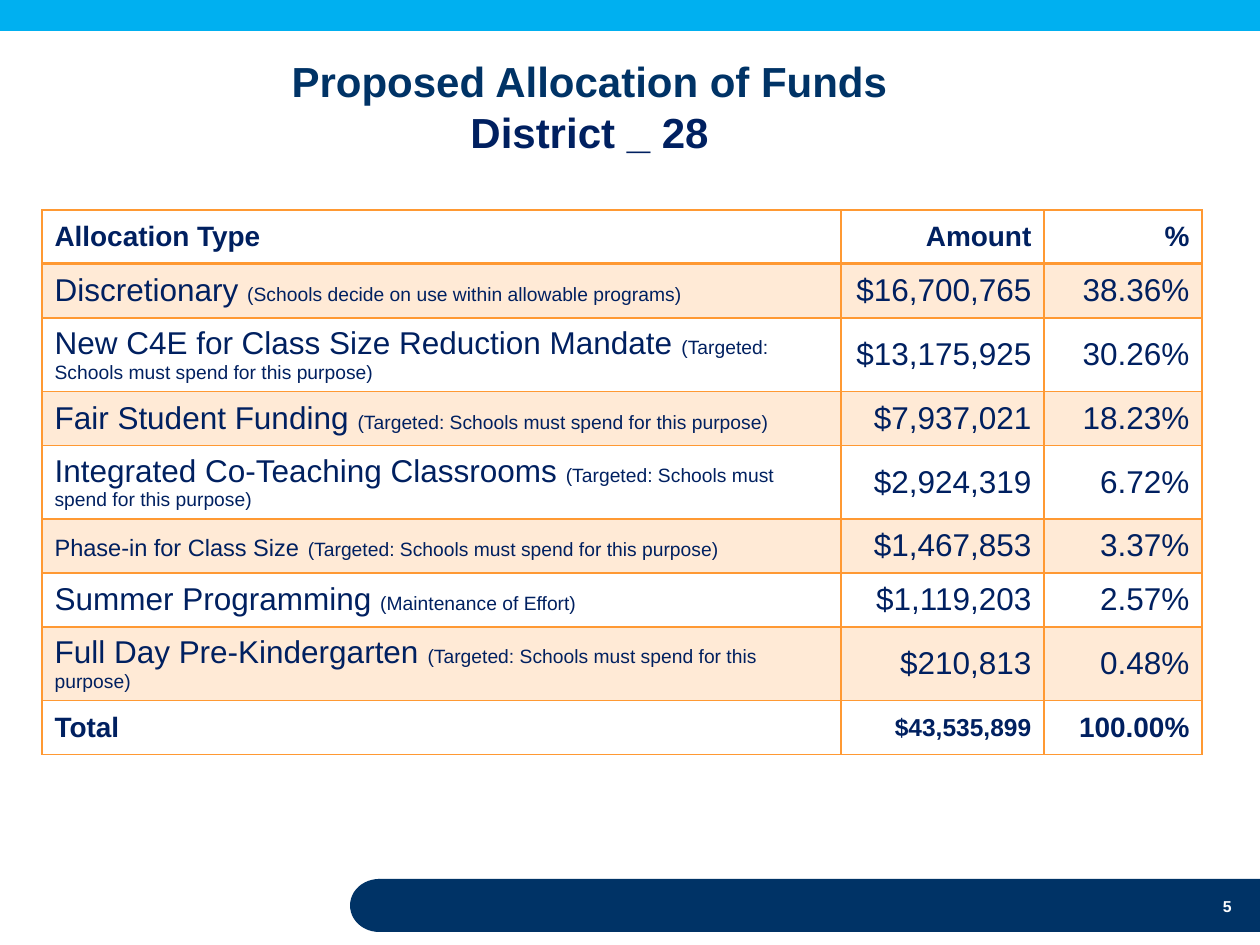
import pptx
import pptx.dml.color
import pptx.enum.shapes
import pptx.enum.text
import pptx.oxml
import pptx.oxml.ns
import pptx.util

NAVY = pptx.dml.color.RGBColor(0x00, 0x33, 0x66)
INK = pptx.dml.color.RGBColor(0x00, 0x20, 0x60)
SKY = pptx.dml.color.RGBColor(0x00, 0xB0, 0xF0)
ORANGE = pptx.dml.color.RGBColor(0xFF, 0x99, 0x33)
WHITE = pptx.dml.color.RGBColor(0xFF, 0xFF, 0xFF)

ALIGN = pptx.enum.text.PP_ALIGN
ANCHOR = pptx.enum.text.MSO_ANCHOR
SHAPE = pptx.enum.shapes.MSO_SHAPE

FONT = "Arial"
PX_PER_INCH = 126
COLUMN_WIDTHS = (799, 203, 158)
ROW_HEIGHT, WRAPPED_HEIGHT = 54, 69
WRAPPED_ROWS = (2, 4, 7)
BODY, NOTE, STRONG = 18, 11, 16
TARGETED = "(Targeted: Schools must spend for this purpose)"

ALLOCATIONS = (
    ("Discretionary ", "(Schools decide on use within allowable programs)", "$16,700,765", "38.36%"),
    ("New C4E for Class Size Reduction Mandate ", TARGETED, "$13,175,925", "30.26%"),
    ("Fair Student Funding ", TARGETED, "$7,937,021", "18.23%"),
    ("Integrated Co-Teaching Classrooms ", TARGETED, "$2,924,319", "6.72%"),
    ("Phase-in for Class Size", TARGETED, "$1,467,853", "3.37%"),
    ("Summer Programming ", "(Maintenance of Effort)", "$1,119,203", "2.57%"),
    ("Full Day Pre-Kindergarten ", TARGETED, "$210,813", "0.48%"),
)


def px(length):
    """Turn whole pixels into EMU."""
    return pptx.util.Emu(round(length * 914400 / PX_PER_INCH))


def add_run(paragraph, text, size, color=INK, bold=False):
    """Add one formatted run to a paragraph."""
    run = paragraph.add_run()
    run.text = text
    run.font.name = FONT
    run.font.size = pptx.util.Pt(size)
    run.font.bold = bold
    run.font.color.rgb = color


def add_band(slide, preset, left, top, width, height, color):
    """Add a plain filled shape without outline."""
    band = slide.shapes.add_shape(preset, px(left), px(top), px(width), px(height))
    band.shadow.inherit = False
    band.fill.solid()
    band.fill.fore_color.rgb = color
    band.line.fill.background()


def add_text(slide, left, top, width, height, align, anchor):
    """Add a wrapping text box and return its first paragraph."""
    frame = slide.shapes.add_textbox(px(left), px(top), px(width), px(height)).text_frame
    frame.word_wrap = True
    frame.vertical_anchor = anchor
    frame.paragraphs[0].alignment = align
    return frame.paragraphs[0]


def set_borders(cell, row):
    """Draw the cell's borders, heavier on the rule under the header."""
    widths = {"L": 1, "R": 1, "T": 2 if row == 1 else 1, "B": 2 if row == 0 else 1}
    properties = cell._tc.get_or_add_tcPr()
    for side, width in widths.items():
        properties.append(pptx.oxml.parse_xml(
            f'<a:ln{side} {pptx.oxml.ns.nsdecls("a")} w="{pptx.util.Pt(width)}">'
            f'<a:solidFill><a:srgbClr val="{ORANGE}"/></a:solidFill></a:ln{side}>'))


def set_shade(cell, shaded):
    """Fill the cell with translucent orange or leave it clear."""
    if not shaded:
        cell.fill.background()
        return
    cell.fill.solid()
    cell.fill.fore_color.rgb = ORANGE
    tint = cell._tc.tcPr.find(pptx.oxml.ns.qn("a:solidFill"))[0]
    tint.append(pptx.oxml.parse_xml(f'<a:alpha {pptx.oxml.ns.nsdecls("a")} val="20000"/>'))


def allocation_runs(name, note):
    """Give the text and size of each run in an allocation label."""
    if name.endswith(" "):
        return [(name, BODY), (note, NOTE)]
    return [(name, 13.5), (" ", BODY), (note, NOTE)]


def table_rows():
    """List every row as cells made of text and size pairs."""
    header = [[(label, STRONG)] for label in ("Allocation Type", "Amount", "%")]
    body = [[allocation_runs(name, note), [(amount, BODY)], [(share, BODY)]]
            for name, note, amount, share in ALLOCATIONS]
    total = [[("Total", STRONG)], [("$43,535,899", 14)], [("100.00%", STRONG)]]
    return [header, *body, total]


def add_allocation_table(slide):
    """Add the table of allocations with its header and total."""
    rows = table_rows()
    heights = [WRAPPED_HEIGHT if row in WRAPPED_ROWS else ROW_HEIGHT for row in range(len(rows))]
    table = slide.shapes.add_table(len(rows), len(COLUMN_WIDTHS), px(42), px(210),
                                   px(sum(COLUMN_WIDTHS)), px(sum(heights))).table
    table.first_row = False
    table.horz_banding = False
    for column, width in zip(table.columns, COLUMN_WIDTHS):
        column.width = px(width)
    for row, (cells, height) in enumerate(zip(rows, heights)):
        table.rows[row].height = px(height)
        for column, runs in enumerate(cells):
            cell = table.cell(row, column)
            cell.vertical_anchor = ANCHOR.MIDDLE
            set_borders(cell, row)
            set_shade(cell, row % 2 == 1)
            paragraph = cell.text_frame.paragraphs[0]
            paragraph.alignment = ALIGN.RIGHT if column else ALIGN.LEFT
            for text, size in runs:
                add_run(paragraph, text, size, bold=row in (0, len(rows) - 1))


def main():
    """Build the slide and save it."""
    deck = pptx.Presentation()
    deck.slide_width, deck.slide_height = px(1260), px(945)
    slide = deck.slides.add_slide(deck.slide_layouts[6])

    add_band(slide, SHAPE.RECTANGLE, 378, 879, 882, 53, NAVY)
    add_band(slide, SHAPE.OVAL, 350, 879, 58, 53, NAVY)
    add_band(slide, SHAPE.RECTANGLE, 0, 0, 1260, 31, SKY)

    page_number = add_text(slide, 1108, 890, 136, 32, ALIGN.RIGHT, ANCHOR.MIDDLE)
    add_run(page_number, "5", 9, WHITE, bold=True)

    title = add_text(slide, 54, 40, 1071, 123, ALIGN.CENTER, ANCHOR.BOTTOM)
    add_run(title, "Proposed Allocation of Funds", 24, NAVY, bold=True)
    title.add_line_break()
    add_run(title, "District _ 28", 24, INK, bold=True)

    add_allocation_table(slide)
    deck.save("out.pptx")


if __name__ == "__main__":
    main()
